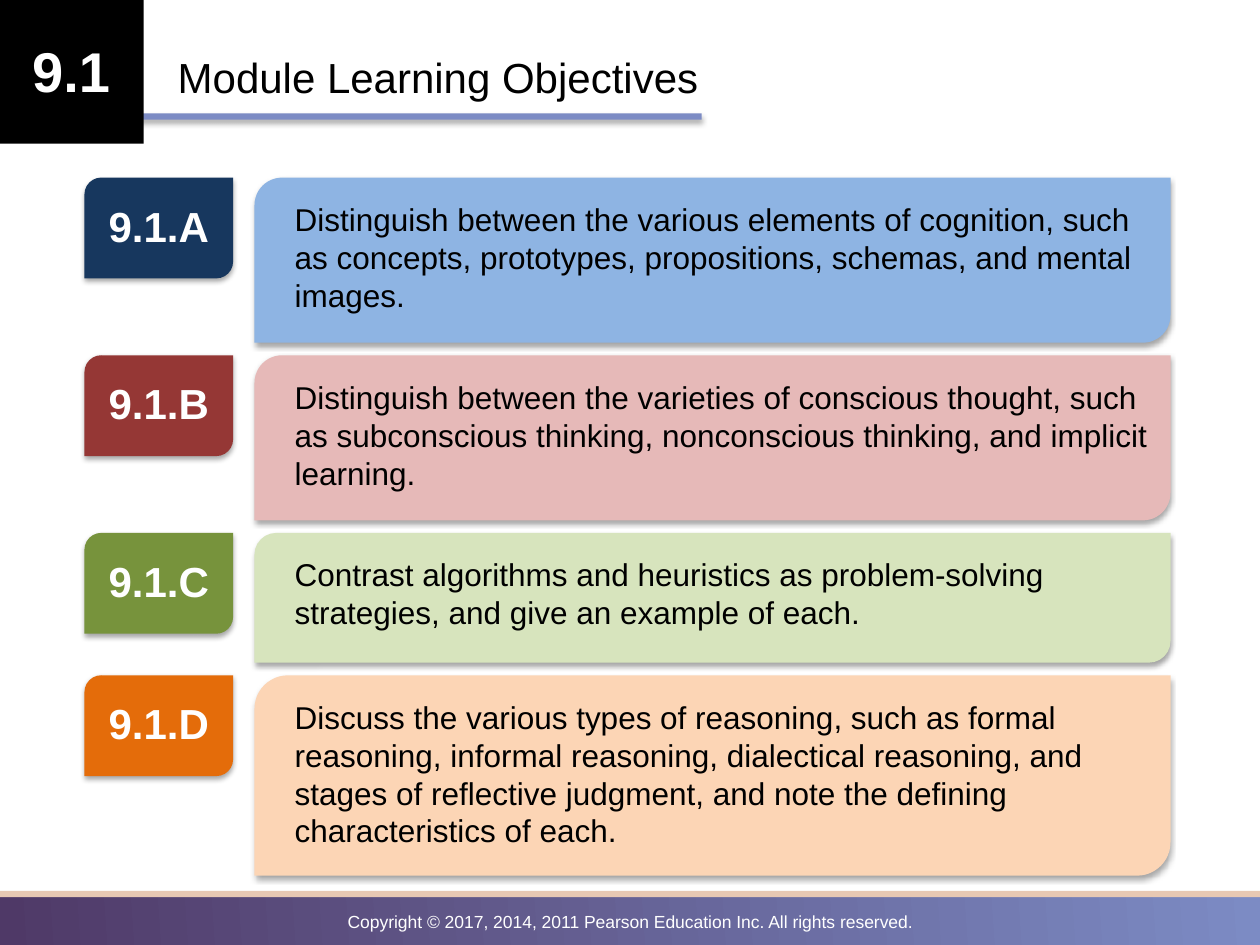
from lxml.etree import SubElement
from pptx import Presentation
from pptx.dml.color import RGBColor
from pptx.enum.shapes import MSO_SHAPE as Preset
from pptx.enum.text import MSO_ANCHOR as Anchor, MSO_AUTO_SIZE as AutoSize, PP_ALIGN as Align
from pptx.oxml.ns import qn
from pptx.util import Inches, Pt

FONT = "Arial"
WHITE, BLACK, PERIWINKLE = "FFFFFF", "000000", "7C8BC4"
TAG_LEFT, TAG_WIDTH, TAG_HEIGHT = 0.67, 1.18, 0.8
PANEL_LEFT, PANEL_WIDTH = 2.02, 7.27
FIRST_TOP, GAP = 1.41, 0.1
TEXT_OFFSET = 0.13

# tag, tag colour, panel colour, panel height, text
OBJECTIVES = [
    ("9.1.A", "17375E", "8EB4E3", 1.31,
     "Distinguish between the various elements of cognition, such as concepts, "
     "prototypes, propositions, schemas, and mental images."),
    ("9.1.B", "953735", "E6B9B8", 1.31,
     "Distinguish between the varieties of conscious thought, such as subconscious "
     "thinking, nonconscious thinking, and implicit learning."),
    ("9.1.C", "77933C", "D7E4BD", 1.03,
     "Contrast algorithms and heuristics as problem-solving strategies, "
     "and give an example of each."),
    ("9.1.D", "E46C0A", "FCD5B5", 1.59,
     "Discuss the various types of reasoning, such as formal reasoning, informal "
     "reasoning, dialectical reasoning, and stages of reflective judgment, and note "
     "the defining characteristics of each."),
]


def color(hex_string):
    return RGBColor.from_string(hex_string)


def add_block(slide, preset, left, top, width, height, fill):
    shape = slide.shapes.add_shape(
        preset, Inches(left), Inches(top), Inches(width), Inches(height))
    shape.shadow.inherit = False
    shape.fill.solid()
    shape.fill.fore_color.rgb = color(fill)
    shape.line.fill.background()
    return shape


def add_soft_shadow(shape):
    effects = shape._element.spPr.find(qn("a:effectLst"))
    shadow = SubElement(effects, qn("a:outerShdw"), blurRad=str(Pt(3.1)),
                        dist=str(Pt(1.8)), dir="5400000", rotWithShape="0")
    shade = SubElement(shadow, qn("a:srgbClr"), val=BLACK)
    SubElement(shade, qn("a:alpha"), val="35000")


def write_text(shape, text, size, font_color, bold=False, align=Align.LEFT):
    frame = shape.text_frame
    frame.text = text
    frame.word_wrap = True
    frame.auto_size = AutoSize.NONE
    frame.vertical_anchor = Anchor.TOP
    paragraph = frame.paragraphs[0]
    paragraph.alignment = align
    font = paragraph.runs[0].font
    font.name, font.size, font.bold = FONT, Pt(size), bold
    font.color.rgb = color(font_color)


def add_text(slide, left, top, width, height, *text_format, **options):
    box = slide.shapes.add_textbox(
        Inches(left), Inches(top), Inches(width), Inches(height))
    write_text(box, *text_format, **options)


def add_footer(slide):
    band = add_block(slide, Preset.RECTANGLE, 0, 7.08, 10, 0.45, PERIWINKLE)
    band.fill.gradient()
    band.fill.gradient_angle = 4
    for stop, shade in zip(band.fill.gradient_stops, ("4F3967", PERIWINKLE)):
        stop.color.rgb = color(shade)
    add_block(slide, Preset.RECTANGLE, 0, 7.07, 10.05, 0.05, "E7C8B3")
    add_text(slide, 0, 7.18, 10, 0.27,
             "Copyright © 2017, 2014, 2011 Pearson Education Inc. All rights reserved.",
             10, WHITE, align=Align.CENTER)


def add_header(slide):
    underline = add_block(slide, Preset.RECTANGLE, -0.2, 0.9, 5.77, 0.05, PERIWINKLE)
    add_soft_shadow(underline)
    add_block(slide, Preset.RECTANGLE, -0.01, -0.01, 1.15, 1.15, BLACK)
    add_text(slide, -0.01, 0.24, 1.15, 0.64, "9.1", 32, WHITE,
             bold=True, align=Align.CENTER)
    title = slide.shapes.title
    title.left, title.top = Inches(1.31), Inches(0.36)
    title.width, title.height = Inches(7.71), Inches(0.5)
    write_text(title, "Module Learning Objectives", 24, BLACK)


def add_objective(slide, top, tag, tag_fill, panel_fill, height, text):
    for left, width, block_height, fill in (
            (TAG_LEFT, TAG_WIDTH, TAG_HEIGHT, tag_fill),
            (PANEL_LEFT, PANEL_WIDTH, height, panel_fill)):
        block = add_block(slide, Preset.ROUND_2_DIAG_RECTANGLE,
                          left, top, width, block_height, fill)
        add_soft_shadow(block)
    text_top = top + TEXT_OFFSET
    add_text(slide, TAG_LEFT, text_top, TAG_WIDTH, 0.5, tag, 24, WHITE,
             bold=True, align=Align.CENTER)
    add_text(slide, PANEL_LEFT + 0.22, text_top, 6.99, height - 0.3, text, 18, BLACK)


def main():
    presentation = Presentation()
    presentation.slide_width, presentation.slide_height = Inches(10), Inches(7.5)
    slide = presentation.slides.add_slide(presentation.slide_layouts[5])
    add_footer(slide)
    add_header(slide)
    top = FIRST_TOP
    for tag, tag_fill, panel_fill, height, text in OBJECTIVES:
        add_objective(slide, top, tag, tag_fill, panel_fill, height, text)
        top += height + GAP
    presentation.save("out.pptx")


if __name__ == "__main__":
    main()
